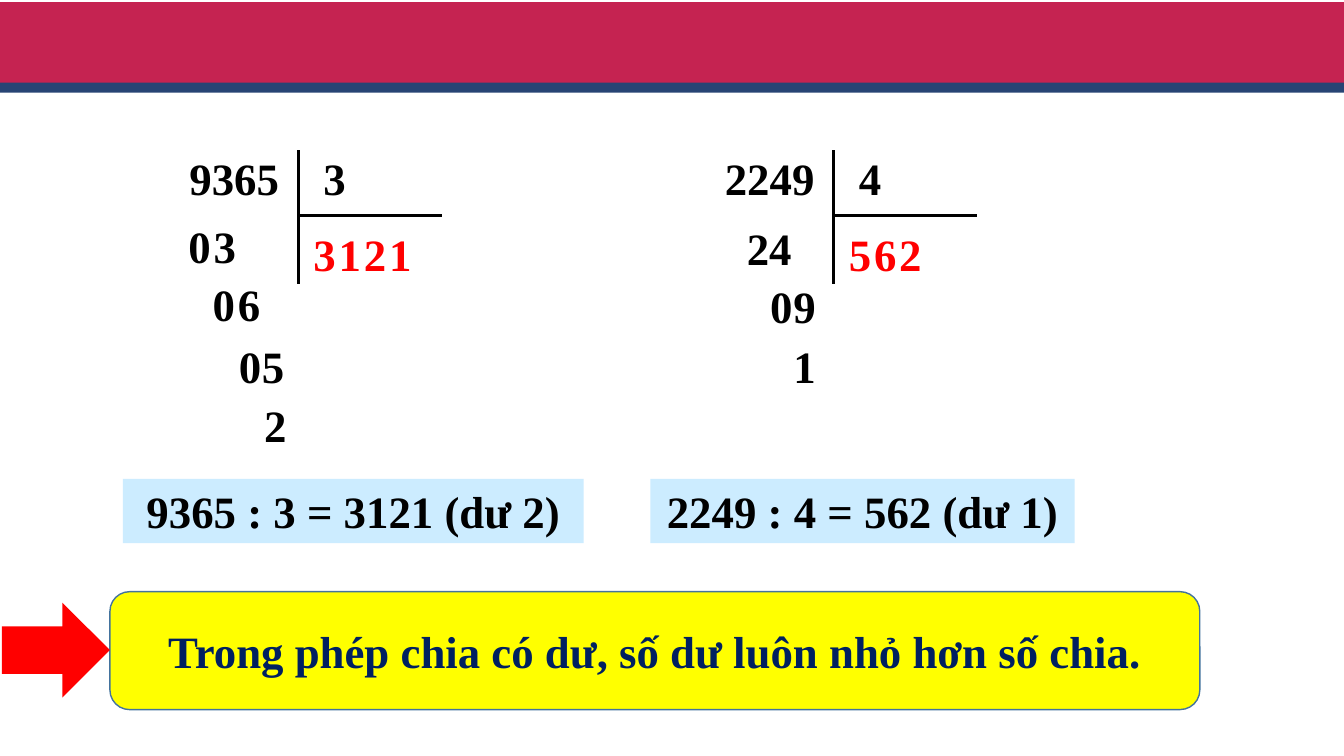
from pptx import Presentation
from pptx.dml.color import RGBColor
from pptx.enum.shapes import MSO_CONNECTOR, MSO_SHAPE
from pptx.enum.text import MSO_ANCHOR, PP_ALIGN
from pptx.oxml.ns import qn
from pptx.util import Inches, Pt
from lxml import etree

CRIMSON = RGBColor(0xC5, 0x23, 0x51)
NAVY = RGBColor(0x27, 0x44, 0x74)
BLACK = RGBColor(0, 0, 0)
RED = RGBColor(0xFF, 0, 0)
PALE_BLUE = RGBColor(0xCC, 0xEC, 0xFF)
YELLOW = RGBColor(0xFF, 0xFF, 0)
STEEL_BLUE = RGBColor(0x43, 0x73, 0x9E)
DARK_BLUE = RGBColor(0, 0x20, 0x60)

deck = Presentation()
deck.slide_width, deck.slide_height = Inches(13.33), Inches(7.5)
page = deck.slides.add_slide(deck.slide_layouts[6])


def add_filled(kind, left, top, width, height, fill):
    shape = page.shapes.add_shape(
        kind, Inches(left), Inches(top), Inches(width), Inches(height))
    shape.shadow.inherit = False
    shape.fill.solid()
    shape.fill.fore_color.rgb = fill
    shape.line.fill.background()
    return shape


def write(shape, text, color=BLACK, align=PP_ALIGN.LEFT, anchor=MSO_ANCHOR.TOP):
    frame = shape.text_frame
    frame.word_wrap = True
    frame.vertical_anchor = anchor
    para = frame.paragraphs[0]
    para.text = text
    para.alignment = align
    para.font.name = "Times New Roman"
    para.font.size = Pt(32)
    para.font.bold = True
    para.font.color.rgb = color


add_filled(MSO_SHAPE.RECTANGLE, 0, 0.02, 13.33, 0.82, CRIMSON)
add_filled(MSO_SHAPE.RECTANGLE, 0, 0.82, 13.33, 0.1, NAVY)

# Each division: left edge, dividend, divisor, quotient,
# then its working rows as digits, left, top and digit step
divisions = [
    (1.78, "9365", "3", "3121",
     [("03", 1.77, 2.12, 0.25), ("06", 2.01, 2.7, 0.25),
      ("05", 2.27, 3.31, 0.23), ("2", 2.52, 3.9, 0)]),
    (7.09, "2249", "4", "562",
     [("24", 7.31, 2.14, 0.22), ("09", 7.54, 2.72, 0.23),
      ("1", 7.77, 3.31, 0)]),
]
for left, dividend, divisor, quotient, working in divisions:
    for text, offset, width in ((dividend, 0, 1.18), (divisor, 1.33, 0.42)):
        box = page.shapes.add_textbox(
            Inches(left + offset), Inches(1.45), Inches(width), Inches(0.64))
        write(box, text)

    rows = [(quotient, left + 1.23, 2.2, 0.25, RED)]
    rows += [(*row, BLACK) for row in working]
    for digits, start, top, step, color in rows:
        for index, digit in enumerate(digits):
            box = page.shapes.add_textbox(
                Inches(start + index * step), Inches(top), Inches(0.42), Inches(0.64))
            write(box, digit, color)

    bar = left + 1.18
    for x1, y1, x2, y2 in ((bar, 1.49, bar, 2.82), (bar, 2.14, bar + 1.42, 2.14)):
        rule = page.shapes.add_connector(
            MSO_CONNECTOR.STRAIGHT, Inches(x1), Inches(y1), Inches(x2), Inches(y2))
        rule.line.color.rgb = BLACK
        rule.line.width = Pt(2.25)
        etree.SubElement(rule._element.spPr, qn("a:effectLst"))

for text, left, width in (("9365 : 3 = 3121 (dư 2)", 1.22, 4.57),
                          ("2249 : 4 = 562 (dư 1)", 6.45, 4.21)):
    result = add_filled(MSO_SHAPE.RECTANGLE, left, 4.75, width, 0.64, PALE_BLUE)
    write(result, text, align=PP_ALIGN.CENTER)

rule_box = add_filled(MSO_SHAPE.ROUNDED_RECTANGLE, 1.09, 5.87, 10.81, 1.17, YELLOW)
rule_box.line.color.rgb = STEEL_BLUE
rule_box.line.width = Pt(1)
write(rule_box, "Trong phép chia có dư, số dư luôn nhỏ hơn số chia.",
      DARK_BLUE, PP_ALIGN.CENTER, MSO_ANCHOR.MIDDLE)
add_filled(MSO_SHAPE.RIGHT_ARROW, 0.02, 5.98, 1.07, 0.94, RED)

deck.save("out.pptx")
